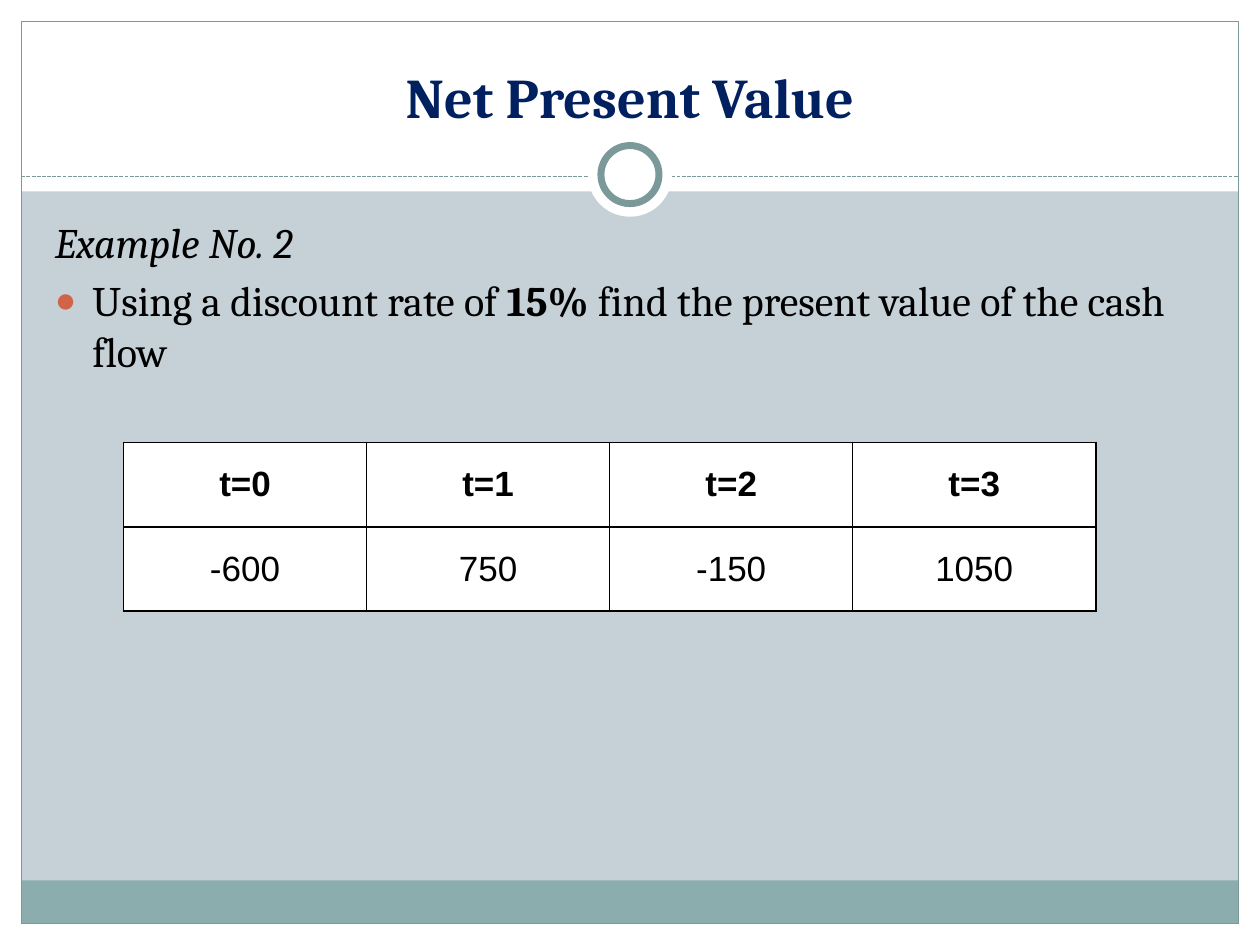
from dataclasses import dataclass
from typing import Optional

from lxml import etree
from pptx import Presentation
from pptx import util as u
from pptx.dml import color
from pptx.enum import dml, shapes, text
from pptx.oxml import ns

WHITE, TEAL, BAND, BLACK = "FFFFFF", "7C999A", "8CADAE", "000000"
WIDTH, HEIGHT, MARGIN = 25.4, 19.05, 0.43
INNER = WIDTH - 2 * MARGIN
RING_CENTRE = 3.52


@dataclass
class Panel:
    left: float
    top: float
    width: float
    height: float
    fill: Optional[str] = None
    line: Optional[str] = None
    weight: float = 0.75
    kind: shapes.MSO_SHAPE = shapes.MSO_SHAPE.RECTANGLE


@dataclass
class Span:
    words: str
    size: int = 24
    font: str = "Cambria"
    shade: str = BLACK
    bold: bool = False
    italic: bool = False


def rgb(value: str) -> color.RGBColor:
    return color.RGBColor.from_string(value)


def circle(diameter: float, **style) -> Panel:
    return Panel((WIDTH - diameter) / 2, RING_CENTRE - diameter / 2, diameter, diameter,
                 fill=WHITE, kind=shapes.MSO_SHAPE.OVAL, **style)


def add_child(parent, tag: str, **attributes):
    return etree.SubElement(parent, ns.qn(tag), attributes)


def draw_panel(page, panel: Panel) -> None:
    box = page.shapes.add_shape(panel.kind, u.Cm(panel.left), u.Cm(panel.top),
                                u.Cm(panel.width), u.Cm(panel.height))
    box.shadow.inherit = False
    if panel.fill:
        box.fill.solid()
        box.fill.fore_color.rgb = rgb(panel.fill)
    else:
        box.fill.background()
    if panel.line:
        box.line.color.rgb = rgb(panel.line)
        box.line.width = u.Pt(panel.weight)
    else:
        box.line.fill.background()


def draw_divider(page, top: float) -> None:
    divider = page.shapes.add_connector(shapes.MSO_CONNECTOR.STRAIGHT, u.Cm(MARGIN), u.Cm(top),
                                        u.Cm(WIDTH - MARGIN), u.Cm(top))
    divider.line.color.rgb = rgb(TEAL)
    divider.line.width = u.Pt(0.75)
    divider.line.dash_style = dml.MSO_LINE.SQUARE_DOT
    add_child(divider.element.spPr, "a:effectLst")


def write(para, spans: list[Span]) -> None:
    for item in spans:
        span = para.add_run()
        span.text = item.words
        span.font.size = u.Pt(item.size)
        span.font.name = item.font
        span.font.color.rgb = rgb(item.shade)
        span.font.bold = item.bold
        span.font.italic = item.italic


def place(holder, left: float, top: float, width: float, height: float,
          anchor: text.MSO_ANCHOR) -> None:
    holder.left, holder.top = u.Cm(left), u.Cm(top)
    holder.width, holder.height = u.Cm(width), u.Cm(height)
    holder.text_frame.auto_size = text.MSO_AUTO_SIZE.NONE
    holder.text_frame.vertical_anchor = anchor
    holder.element.getparent().append(holder.element)


def set_bullet(para, indent: float, mark: Optional[str] = None) -> None:
    props = para._p.get_or_add_pPr()
    props.set("marL", str(u.Cm(indent)))
    props.set("indent", str(-u.Cm(indent)))
    if mark is None:
        add_child(props, "a:buNone")
        return
    add_child(add_child(props, "a:buClr"), "a:srgbClr", val="D16349")
    add_child(props, "a:buSzPct", val="85000")
    add_child(props, "a:buChar", char=mark)


def set_borders(cell, shade: str, weight: float) -> None:
    props = cell._tc.get_or_add_tcPr()
    for position, side in enumerate(("a:lnL", "a:lnR", "a:lnT", "a:lnB")):
        edge = etree.Element(ns.qn(side), w=str(u.Pt(weight)))
        add_child(add_child(edge, "a:solidFill"), "a:srgbClr", val=shade)
        props.insert(position, edge)


def draw_table(page, rows: list[list[str]], left: float, top: float,
               column: float, row: float) -> None:
    frame = page.shapes.add_table(len(rows), len(rows[0]), u.Cm(left), u.Cm(top),
                                  u.Cm(column * len(rows[0])), u.Cm(row * len(rows)))
    table = frame.table
    table.first_row = table.horz_banding = False
    for r, values in enumerate(rows):
        for c, value in enumerate(values):
            cell = table.cell(r, c)
            cell.fill.solid()
            cell.fill.fore_color.rgb = rgb(WHITE)
            cell.margin_left = cell.margin_right = u.Cm(0.18)
            cell.margin_top = cell.margin_bottom = 0
            cell.vertical_anchor = text.MSO_ANCHOR.MIDDLE
            set_borders(cell, BLACK, 1)
            para = cell.text_frame.paragraphs[0]
            para.alignment = text.PP_ALIGN.CENTER
            write(para, [Span(value, size=20, font="Arial", bold=r == 0)])


PANELS = [
    Panel(0, HEIGHT - MARGIN, WIDTH, MARGIN, fill=WHITE),
    Panel(0, 0, WIDTH, 3.86, fill=WHITE),
    Panel(0, 0, MARGIN, HEIGHT, fill=WHITE),
    Panel(WIDTH - MARGIN, 0, MARGIN, HEIGHT, fill=WHITE),
    Panel(MARGIN, 17.75, INNER, 0.87, fill=BAND),
    Panel(MARGIN, MARGIN, INNER, HEIGHT - 2 * MARGIN, line=TEAL),
]
RINGS = [circle(1.7), circle(1.17, line=TEAL, weight=4)]
CASH_FLOW = [["t=0", "t=1", "t=2", "t=3"], ["-600", "750", "-150", "1050"]]


def main() -> None:
    deck = Presentation()
    deck.slide_width, deck.slide_height = u.Cm(WIDTH), u.Cm(HEIGHT)
    page = deck.slides.add_slide(deck.slide_layouts[1])
    page.background.fill.solid()
    page.background.fill.fore_color.rgb = rgb("C5D1D7")

    for panel in PANELS:
        draw_panel(page, panel)
    draw_divider(page, 3.56)
    for ring in RINGS:
        draw_panel(page, ring)

    title = page.shapes.title
    place(title, 0.85, 0.64, 23.7, 2.11, text.MSO_ANCHOR.BOTTOM)
    heading = title.text_frame.paragraphs[0]
    heading.alignment = text.PP_ALIGN.CENTER
    write(heading, [Span("Net Present Value", size=32, shade="002060", bold=True)])

    body = page.placeholders[1]
    place(body, 0.85, 4.23, 23.27, 12.7, text.MSO_ANCHOR.TOP)
    example = body.text_frame.paragraphs[0]
    set_bullet(example, 0)
    write(example, [Span("Example No. 2", italic=True)])
    task = body.text_frame.add_paragraph()
    set_bullet(task, 0.76, "●")
    write(task, [Span("Using a discount rate of "), Span("15%", bold=True),
                 Span(" find the present value of the cash flow")])

    draw_table(page, CASH_FLOW, left=2.49, top=8.92, column=4.9, row=1.7)
    deck.save("out.pptx")


if __name__ == "__main__":
    main()
